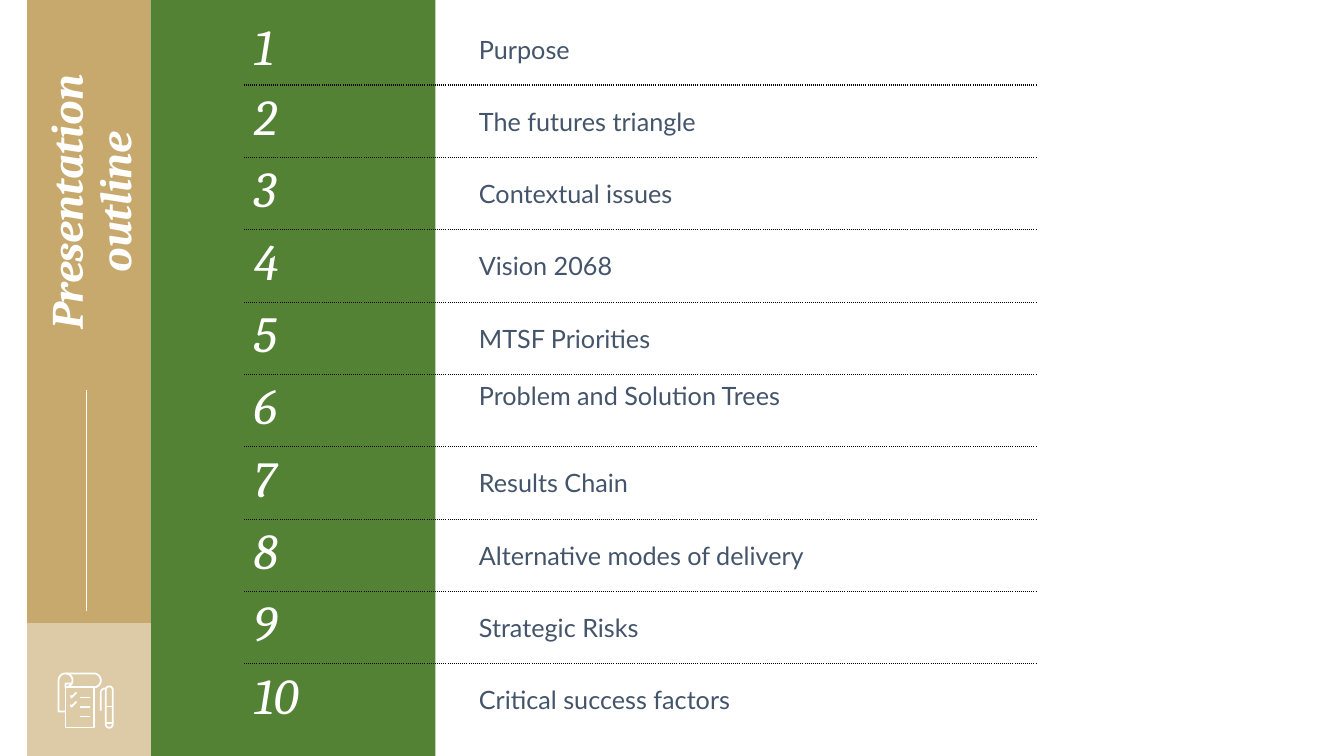
"""Build the presentation outline slide."""
import math

import lxml.etree
import pptx
import pptx.dml.color
import pptx.enum.dml
import pptx.enum.shapes
import pptx.enum.text
import pptx.oxml
import pptx.oxml.ns
import pptx.util

Pt = pptx.util.Pt
WHITE = "FFFFFF"
NO_GRID_STYLE = "{2D5ABB26-0587-4C30-8999-92F81FD0307C}"
TOPICS = [
    "Purpose",
    "The futures triangle",
    "Contextual issues",
    "Vision 2068",
    "MTSF Priorities",
    "Problem and Solution Trees",
    "Results Chain",
    "Alternative modes of delivery",
    "Strategic Risks",
    "Critical success factors",
]


def paint(color_format, color):
    color_format.rgb = pptx.dml.color.RGBColor.from_string(color)


def style_text(paragraph, face, size, color, bold=False, italic=False):
    font = paragraph.font
    font.name, font.size, font.bold, font.italic = face, Pt(size), bold, italic
    paint(font.color, color)


def outline(shape, color, width):
    shape.shadow.inherit = False
    shape.fill.background()
    paint(shape.line.color, color)
    shape.line.width = Pt(width)


def add_panel(shapes, left, top, width, height, color):
    panel = shapes.add_shape(
        pptx.enum.shapes.MSO_SHAPE.RECTANGLE, Pt(left), Pt(top), Pt(width), Pt(height))
    panel.shadow.inherit = False
    panel.fill.solid()
    paint(panel.fill.fore_color, color)
    panel.line.fill.background()
    return panel


def add_rule(shapes, x1, y1, x2, y2, width):
    rule = shapes.add_connector(
        pptx.enum.shapes.MSO_CONNECTOR.STRAIGHT, Pt(x1), Pt(y1), Pt(x2), Pt(y2))
    paint(rule.line.color, WHITE)
    rule.line.width = Pt(width)
    lxml.etree.SubElement(rule.element.spPr, pptx.oxml.ns.qn("a:effectLst"))


def add_stroke(shapes, points, close=False):
    corners = [(Pt(x), Pt(y)) for x, y in points]
    builder = shapes.build_freeform(*corners[0])
    builder.add_line_segments(corners[1:], close=close)
    outline(builder.convert_to_shape(), WHITE, 1.25)


def arc(center_x, center_y, radius, start, end, steps=16):
    angles = [math.radians(start + (end - start) * i / steps) for i in range(steps + 1)]
    return [(center_x + radius * math.cos(a), center_y + radius * math.sin(a))
            for a in angles]


def add_checklist_icon(slide):
    icon = slide.shapes.add_group_shape().shapes
    page = icon.add_shape(
        pptx.enum.shapes.MSO_SHAPE.RECTANGLE, Pt(46.8), Pt(491), Pt(20.2), Pt(28.8))
    outline(page, WHITE, 1.25)
    add_stroke(icon, [(46.8, 508.3), (41.8, 508.3), *arc(46.8, 486, 5, 180, 450),
                      (46.8, 488.2), (51.8, 488.2)])
    add_stroke(icon, [*arc(67, 486, 5, 90, -90), (46.8, 481)])
    for y in (498.2, 505, 511.8):
        add_rule(icon, 56.9, y, 64.1, y, 1.25)
    for y in (498.2, 504.8):
        add_stroke(icon, [(50.4, y - 1.4), (51.1, y), (54.7, y - 3.6)])
    add_stroke(icon, arc(78.1, 517.3, 2.5, 0, 180) + arc(78.1, 492.8, 2.5, 180, 360), True)
    for y in (504.7, 516.2):
        add_rule(icon, 75.6, y, 80.6, y, 1.25)
    add_stroke(icon, [(72, 507.6), *arc(74.9, 494.7, 2.9, 180, 270), (75.6, 491.8)])


def place_title(slide, text):
    title = slide.shapes.title
    title.element.getparent().append(title.element)
    title.left, title.top, title.width, title.height = Pt(-67.7), Pt(109.4), Pt(267.8), Pt(69.8)
    title.rotation = 270
    frame = title.text_frame
    frame.text = text
    frame.word_wrap = True
    frame.auto_size = pptx.enum.text.MSO_AUTO_SIZE.NONE
    frame.vertical_anchor = pptx.enum.text.MSO_ANCHOR.MIDDLE
    frame.margin_left = frame.margin_right = frame.margin_top = frame.margin_bottom = 0
    paragraph = frame.paragraphs[0]
    paragraph.alignment = pptx.enum.text.PP_ALIGN.CENTER
    paragraph.line_spacing = 0.9
    style_text(paragraph, "Cambria", 32, WHITE, bold=True, italic=True)


def add_dotted_edge(cell, side):
    edge = pptx.oxml.parse_xml(
        f'<a:{side} {pptx.oxml.ns.nsdecls("a")} w="12700"><a:solidFill>'
        f'<a:srgbClr val="000000"/></a:solidFill><a:prstDash val="sysDot"/></a:{side}>')
    cell._tc.get_or_add_tcPr().insert(0, edge)


def fill_cell(cell, text, face, size, color, italic=False):
    cell.text = text
    cell.fill.background()
    style_text(cell.text_frame.paragraphs[0], face, size, color, italic=italic)


def add_outline_table(slide, topics):
    table = slide.shapes.add_table(
        len(topics), 2, Pt(174.2), Pt(10.8), Pt(567), Pt(516)).table
    table.first_row = table.horz_banding = False
    table._tbl.tblPr.find(pptx.oxml.ns.qn("a:tableStyleId")).text = NO_GRID_STYLE
    table.columns[0].width, table.columns[1].width = Pt(160.7), Pt(406.3)
    for index, topic in enumerate(topics):
        table.rows[index].height = Pt(51.7 if index else 50)
        number, label = table.cell(index, 0), table.cell(index, 1)
        fill_cell(number, str(index + 1), "Cambria", 36, WHITE, italic=True)
        fill_cell(label, topic, "Lato", 18, "44546A")
        label.vertical_anchor = pptx.enum.text.MSO_ANCHOR.MIDDLE
        for cell in (number, label):
            if index < len(topics) - 1:
                add_dotted_edge(cell, "lnB")
            if index:
                add_dotted_edge(cell, "lnT")
    raised_topic = table.cell(topics.index("Problem and Solution Trees"), 1)
    raised_topic.margin_bottom = Pt(25)


def main():
    deck = pptx.Presentation()
    deck.slide_width, deck.slide_height = Pt(960), Pt(540)
    slide = deck.slides.add_slide(deck.slide_layouts.get_by_name("Title Only"))
    add_panel(slide.shapes, 19.4, 0, 88.2, 445, "C7A96E")
    add_panel(slide.shapes, 107.6, 0, 203.4, 540, "548235")
    add_panel(slide.shapes, 19.4, 445, 88.2, 95, "DDCBA8")
    place_title(slide, "Presentation outline")
    add_rule(slide.shapes, 61.5, 278.6, 61.5, 436.3, 0.5)
    add_checklist_icon(slide)
    add_outline_table(slide, TOPICS)
    deck.save("out.pptx")


if __name__ == "__main__":
    main()
